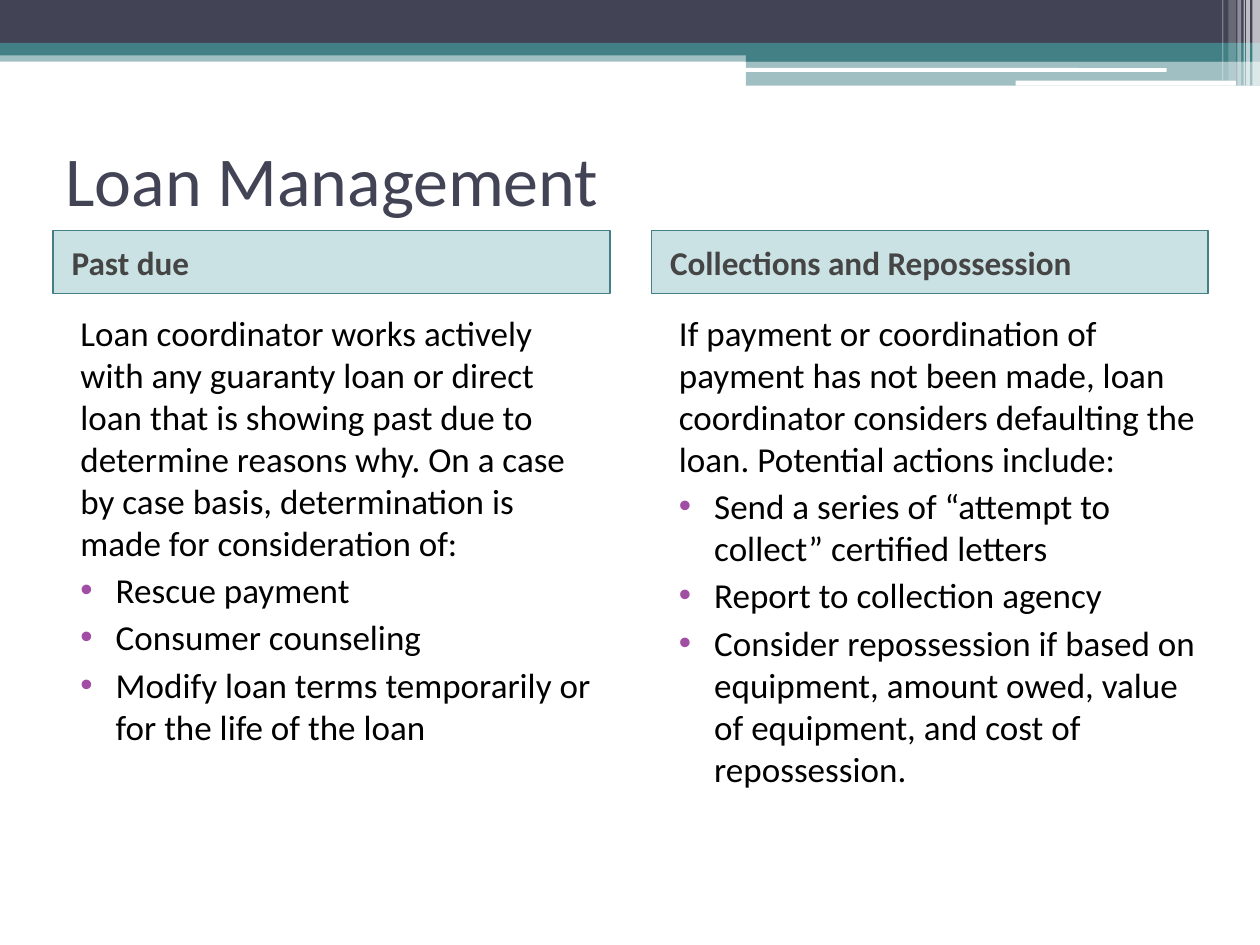
import pptx
import pptx.util
import pptx.dml.color
import pptx.enum.shapes
import pptx.enum.text
import pptx.oxml.ns
from lxml import etree

Inches, Pt = pptx.util.Inches, pptx.util.Pt
Anchor = pptx.enum.text.MSO_ANCHOR
Kind = pptx.enum.shapes.MSO_SHAPE
qn = pptx.oxml.ns.qn

COLORS = {
    "navy": "424456", "teal": "438086", "white": "FFFFFF", "pale": "328E97",
    "head": "454545", "text": "000000", "bullet": "A04DA3",
}
FONT = "Calibri"

TITLE = "Loan Management"
COLUMNS = [
    {
        "head": "Past due",
        "lead": "Loan coordinator works actively with any guaranty loan or direct "
                "loan that is showing past due to determine reasons why. On a case "
                "by case basis, determination is made for consideration of:",
        "items": [
            "Rescue payment",
            "Consumer counseling",
            "Modify loan terms temporarily or for the life of the loan",
        ],
        "height": 3.67,
    },
    {
        "head": "Collections and Repossession",
        "lead": "If payment or coordination of payment has not been made, loan "
                "coordinator considers defaulting the loan. Potential actions include:",
        "items": [
            "Send a series of “attempt to collect” certified letters",
            "Report to collection agency",
            "Consider repossession if based on equipment, amount owed, value of "
            "equipment, and cost of repossession.",
        ],
        "height": 4.25,
    },
]

# left, top, width, height, color, opacity in percent
BANDS = [
    (0, 0.4, 10, 0.09, "teal", 50),
    (0, 0, 10, 0.34, "navy", 100),
    (0, 0.34, 10, 0.1, "teal", 100),
    (5.92, 0.39, 4.08, 0.1, "teal", 100),
    (5.92, 0.48, 4.08, 0.2, "teal", 50),
]
RULES = [(5.91, 0.54, 3.35, 0.03), (8.06, 0.64, 1.75, 0.04)]
# left, width, height, opacity in percent
STRIPES = [
    (9.94, 0.06, 0.68, 65), (9.89, 0.03, 0.68, 65), (9.87, 0.01, 0.68, 60),
    (9.82, 0.03, 0.68, 40), (9.75, 0.06, 0.64, 20), (9.7, 0.01, 0.64, 30),
]

LEFT, WIDTH, GAP = 0.42, 4.42, 0.33

prs = pptx.Presentation()
prs.slide_width, prs.slide_height = Inches(10), Inches(7.5)
slide = prs.slides.add_slide(prs.slide_layouts[6])


def rgb(name):
    return pptx.dml.color.RGBColor.from_string(COLORS[name])


def add_box(box, color, alpha=100, line=None, kind=Kind.RECTANGLE):
    shape = slide.shapes.add_shape(kind, *map(Inches, box))
    shape.shadow.inherit = False
    shape.fill.solid()
    shape.fill.fore_color.rgb = rgb(color)
    if alpha < 100:
        tint = shape.fill._xPr.find(".//" + qn("a:srgbClr"))
        etree.SubElement(tint, qn("a:alpha"), val=str(alpha * 1000))
    if line:
        shape.line.color.rgb = rgb(line)
        shape.line.width = Pt(1)
    else:
        shape.line.fill.background()
    return shape


def add_label(box):
    return slide.shapes.add_textbox(*map(Inches, box))


def add_text(shape, text, size=20, color="text", bold=False, indent=0,
             hang=0, before=0, bullet=False, anchor=Anchor.TOP):
    """Write one paragraph, using the empty first one if it is free."""
    frame = shape.text_frame
    frame.word_wrap = True
    frame.vertical_anchor = anchor
    para = frame.paragraphs[0] if not frame.text else frame.add_paragraph()
    para.alignment = pptx.enum.text.PP_ALIGN.LEFT
    para.space_before = Pt(before)
    run = para.add_run()
    run.text = text
    run.font.name, run.font.size, run.font.bold = FONT, Pt(size), bold
    run.font.color.rgb = rgb(color)
    props = para._p.get_or_add_pPr()
    props.set("marL", str(Inches(indent)))
    props.set("indent", str(Inches(-hang)))
    if bullet:
        tint = etree.SubElement(props, qn("a:buClr"))
        etree.SubElement(tint, qn("a:srgbClr"), val=COLORS["bullet"])
        etree.SubElement(props, qn("a:buFont"), typeface="Arial")
        etree.SubElement(props, qn("a:buChar"), char="•")


for *box, color, alpha in BANDS:
    add_box(box, color, alpha)
for box in RULES:
    add_box(box, "white", kind=Kind.ROUNDED_RECTANGLE)
for left, width, height, alpha in STRIPES:
    add_box((left, 0, width, height), "white", alpha)

title = add_label((LEFT, 0.83, 2 * WIDTH + GAP, 1.17))
add_text(title, TITLE, size=40, color="navy", anchor=Anchor.MIDDLE)

for i, col in enumerate(COLUMNS):
    left = LEFT + i * (WIDTH + GAP)
    head = add_box((left, 1.83, WIDTH, 0.5), "pale", 25, line="teal")
    add_text(head, col["head"], size=19, color="head", bold=True,
             indent=0.05, before=3, anchor=Anchor.MIDDLE)
    body = add_label((left, 2.42, WIDTH, col["height"]))
    add_text(body, col["lead"], indent=0.12, before=3)
    for item in col["items"]:
        add_text(body, item, indent=0.4, hang=0.28, before=3, bullet=True)

prs.save("out.pptx")
